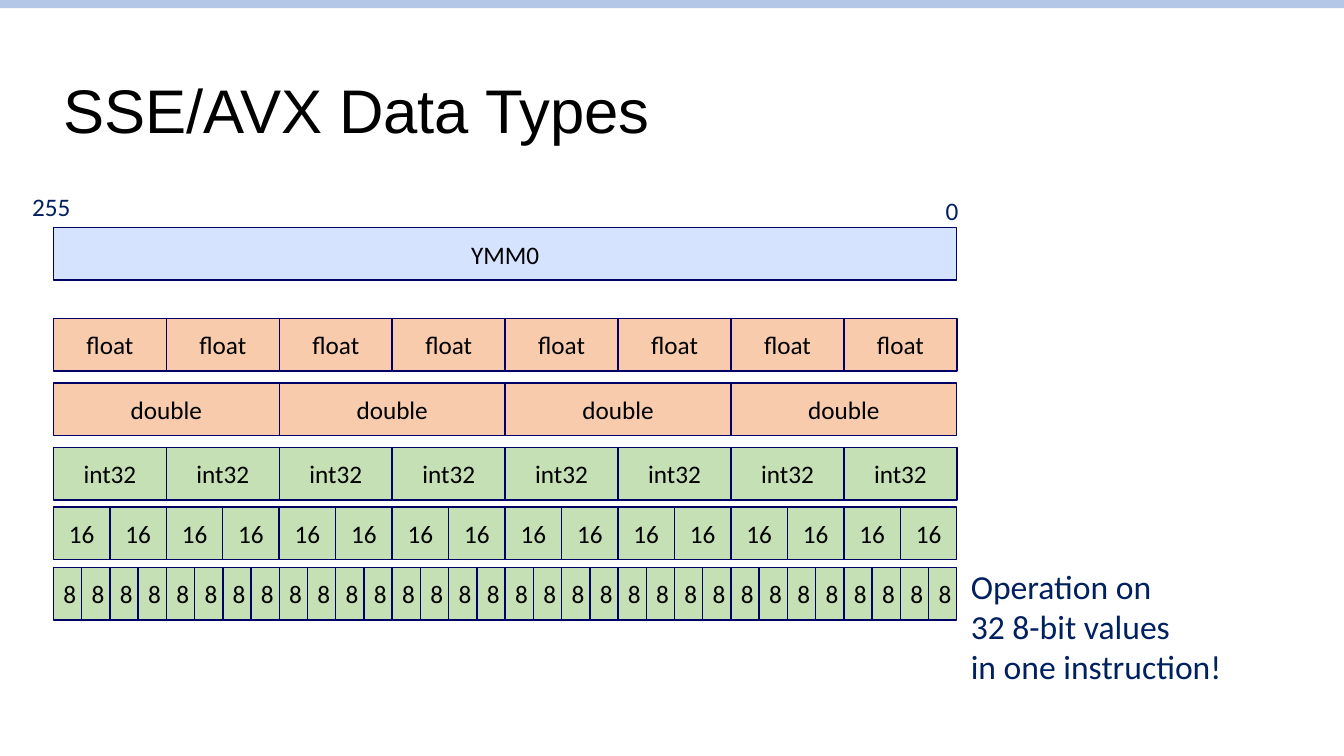
from dataclasses import dataclass

from pptx import Presentation
from pptx.dml.color import RGBColor
from pptx.enum.shapes import MSO_SHAPE
from pptx.enum.text import MSO_ANCHOR, MSO_AUTO_SIZE, PP_ALIGN
from pptx.util import Inches, Pt

RECTANGLE = MSO_SHAPE.RECTANGLE
MIDDLE, TOP = MSO_ANCHOR.MIDDLE, MSO_ANCHOR.TOP
CENTER, LEFT = PP_ALIGN.CENTER, PP_ALIGN.LEFT
GROW = MSO_AUTO_SIZE.SHAPE_TO_FIT_TEXT


@dataclass(frozen=True)
class Theme:
    heading_font: str = "Arial"
    body_font: str = "Calibri"
    title_size: int = 44
    note_size: int = 24
    label_size: int = 18
    black: str = "000000"
    navy: str = "002060"
    outline: str = "000066"
    top_band: str = "B4C7E7"
    register: str = "D6E3FF"
    floating: str = "F8CBAD"
    integer: str = "C5E0B4"


THEME = Theme()


def add_box(left, top, width, height, fill):
    box = slide.shapes.add_shape(
        RECTANGLE, Inches(left), Inches(top), Inches(width), Inches(height))
    box.shadow.inherit = False
    box.fill.solid()
    box.fill.fore_color.rgb = RGBColor.from_string(fill)
    return box


def write(shape, text, size, color, font=THEME.body_font, align=LEFT, anchor=TOP):
    frame = shape.text_frame
    frame.word_wrap = True
    frame.vertical_anchor = anchor
    paragraph = frame.paragraphs[0]
    paragraph.text = text
    paragraph.alignment = align
    paragraph.font.name = font
    paragraph.font.size = Pt(size)
    paragraph.font.color.rgb = RGBColor.from_string(color)
    return frame


deck = Presentation()
deck.slide_width, deck.slide_height = Inches(13.33), Inches(7.5)
slide = deck.slides.add_slide(deck.slide_layouts[6])

top_band = add_box(0, 0, 13.33, 0.08, THEME.top_band)
top_band.line.fill.background()

title = slide.shapes.add_textbox(Inches(0.53), Inches(0.4), Inches(12.27), Inches(1.45))
title_frame = write(title, "SSE/AVX Data Types", THEME.title_size, THEME.black,
                    THEME.heading_font, anchor=MIDDLE)
title_frame.paragraphs[0].line_spacing = 0.9

REGISTER_BITS = 256
REGISTER_LEFT, REGISTER_WIDTH, ROW_HEIGHT = 0.53, 8.96, 0.52
register_rows = [
    ("YMM0", 256, 2.26, THEME.register),
    ("float", 32, 3.16, THEME.floating),
    ("double", 64, 3.8, THEME.floating),
    ("int32", 32, 4.44, THEME.integer),
    ("16", 16, 5.03, THEME.integer),
    ("8", 8, 5.63, THEME.integer),
]
for data_type, bits, row_top, fill in register_rows:
    lanes = REGISTER_BITS // bits
    lane_width = REGISTER_WIDTH / lanes
    for lane in range(lanes):
        cell = add_box(REGISTER_LEFT + lane * lane_width, row_top,
                       lane_width, ROW_HEIGHT, fill)
        cell.line.color.rgb = RGBColor.from_string(THEME.outline)
        cell.line.width = Pt(1)
        write(cell, data_type, THEME.label_size, THEME.black, align=CENTER, anchor=MIDDLE)

annotations = [
    ("Operation on\n32 8-bit values\nin one instruction!",
     9.53, 5.56, 2.78, 1.31, THEME.note_size, True),
    ("255", 0.22, 1.85, 0.59, 0.4, THEME.label_size, False),
    ("0", 9.28, 1.89, 0.33, 0.4, THEME.label_size, False),
]
for text, left, top, width, height, size, wraps in annotations:
    annotation = slide.shapes.add_textbox(
        Inches(left), Inches(top), Inches(width), Inches(height))
    annotation_frame = write(annotation, text, size, THEME.navy)
    annotation_frame.word_wrap = wraps
    annotation_frame.auto_size = GROW

deck.save("out.pptx")
